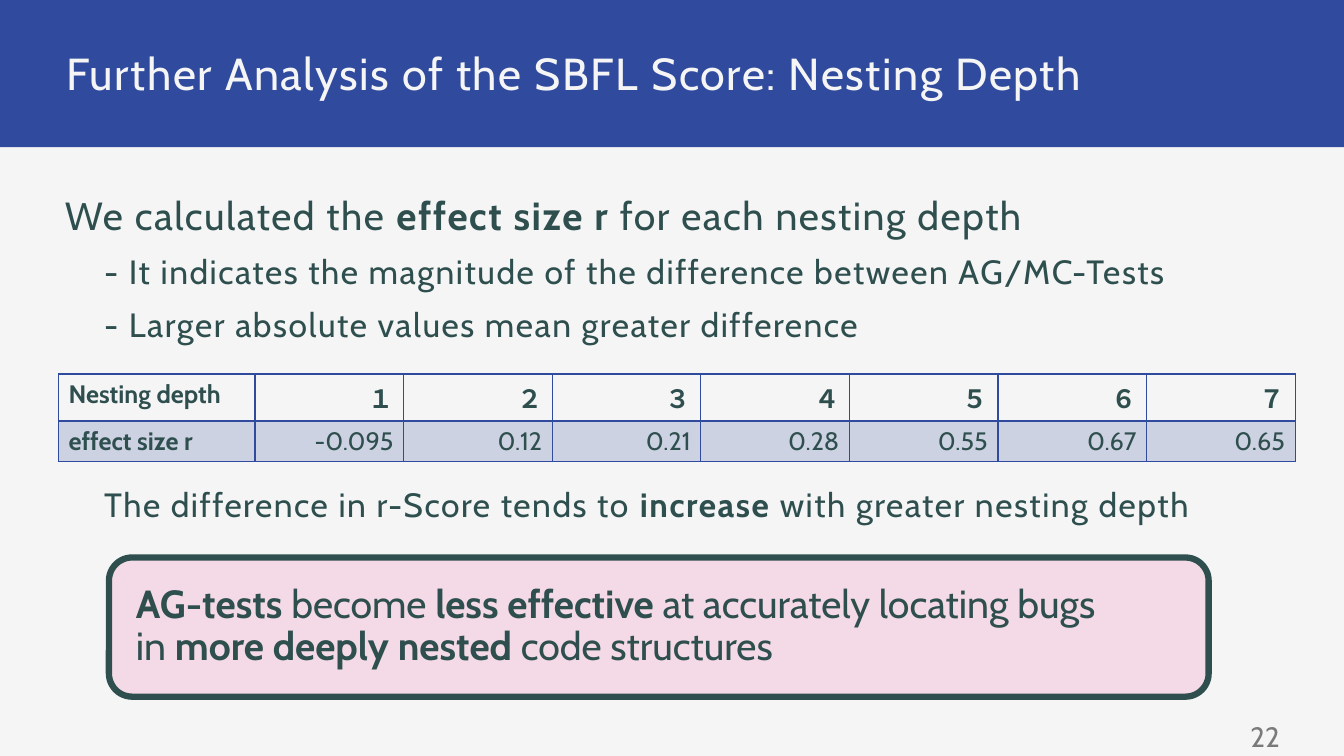
"""Builds the slide on effect size by nesting depth."""
from dataclasses import dataclass
from typing import Any

from lxml import etree
from pptx import Presentation, util as u
from pptx.dml.color import RGBColor
from pptx.enum import shapes, text
from pptx.oxml import ns


@dataclass(frozen=True)
class Theme:
    font: str = "Cabin"
    back: str = "F5F5F5"
    blue: str = "304A9E"
    ink: str = "2F4F4F"
    pink: str = "F4DAE6"
    gray: str = "7A7A7A"
    title: int = 32
    lead: int = 28
    item: int = 24
    page: int = 20
    cell: int = 18
    track: int = 110


@dataclass(frozen=True)
class Box:
    left: float
    top: float
    width: float
    height: float

    def pts(self) -> list[u.Length]:
        return [u.Pt(n) for n in (self.left, self.top, self.width, self.height)]


@dataclass(frozen=True)
class Line:
    words: str
    size: int
    level: int = 0
    before: float = 0


LOOK = Theme()
WIDE, HIGH = 960, 540
BAND = Box(-2, -1.5, 964, 106.6)
HEAD = Box(41.8, 31, 877, 42.5)
BODY = Box(41.8, 136, 877, 373)
PAGE = Box(702.7, 511.9, 216, 28)
GRID = Box(41.8, 267.1, 883.4, 62.5)
NOTE = Box(77.8, 398.2, 785.5, 99.4)
FIRST = 140.4
ROWS = (33.5, 29)
INDENT = 28

LINES = (
    Line("We calculated the *effect size r* for each nesting depth", LOOK.lead, 0, 14),
    Line("- It indicates the magnitude of the difference between AG/MC-Tests", LOOK.item, 1, 12),
    Line("- Larger absolute values mean greater difference", LOOK.item, 1, 12),
    Line("The difference in r-Score tends to* increase *with greater nesting depth",
         LOOK.item, 1, 102),
)
DATA = (
    ("Nesting depth", *"１２３４５６７"),
    ("effect size r", "-0.095", "0.12", "0.21", "0.28", "0.55", "0.67", "0.65"),
)


def tint(tone: str) -> RGBColor:
    """Turn a hex string into a colour."""
    return RGBColor.from_string(tone)


def style(run: Any, size: int, tone: str = LOOK.ink, bold: bool = False, track: int = 0) -> None:
    """Format one run."""
    font = run.font
    font.name, font.size, font.bold = LOOK.font, u.Pt(size), bold
    font.color.rgb = tint(tone)
    if track:
        run._r.get_or_add_rPr().set("spc", str(track))


def write(para: Any, words: str, size: int, track: int = 0) -> None:
    """Write words, bold between stars, with line breaks kept."""
    for turn, part in enumerate(words.split("*")):
        for row, piece in enumerate(part.split("\n")):
            if row:
                para.add_line_break()
            if piece:
                run = para.add_run()
                run.text = piece
                style(run, size, bold=turn % 2 == 1, track=track)


def frame(shape: Any, pad: float, anchor: Any = text.MSO_ANCHOR.TOP) -> Any:
    """Set wrapping, insets and anchor, and return the text frame."""
    area = shape.text_frame
    area.word_wrap = True
    area.auto_size = text.MSO_AUTO_SIZE.NONE
    area.vertical_anchor = anchor
    area.margin_left = area.margin_right = area.margin_top = area.margin_bottom = u.Pt(pad)
    return area


def place(shape: Any, box: Box) -> None:
    """Move a placeholder to its box."""
    shape.left, shape.top, shape.width, shape.height = box.pts()


def panel(slide: Any, kind: Any, box: Box, fill: str, edge: str = "") -> Any:
    """Add a filled shape with an optional outline."""
    shape = slide.shapes.add_shape(kind, *box.pts())
    shape.shadow.inherit = False
    shape.fill.solid()
    shape.fill.fore_color.rgb = tint(fill)
    if edge:
        shape.line.color.rgb = tint(edge)
        shape.line.width = u.Pt(4.5)
    else:
        shape.line.fill.background()
    return shape


def rule(cell: Any, sides: dict[str, float]) -> None:
    """Draw the borders of a cell, widths in points."""
    props = cell._tc.get_or_add_tcPr()
    for spot, (side, width) in enumerate(sides.items()):
        line = etree.Element(ns.qn(f"a:ln{side}"), w=str(u.Pt(width)))
        fill = etree.SubElement(line, ns.qn("a:solidFill"))
        etree.SubElement(fill, ns.qn("a:srgbClr"), val=LOOK.blue)
        props.insert(spot, line)


def grid(slide: Any) -> None:
    """Add the table of effect sizes."""
    count = len(DATA[0])
    table = slide.shapes.add_table(len(DATA), count, *GRID.pts()).table
    rest = (GRID.width - FIRST) / (count - 1)
    for spot, col in enumerate(table.columns):
        col.width = u.Pt(rest if spot else FIRST)
    for row, (high, words) in enumerate(zip(ROWS, DATA)):
        table.rows[row].height = u.Pt(high)
        for col, word in enumerate(words):
            cell = table.cell(row, col)
            cell.text_frame.text = word
            para = cell.text_frame.paragraphs[0]
            para.alignment = text.PP_ALIGN.RIGHT if col else text.PP_ALIGN.LEFT
            style(para.runs[0], LOOK.cell, bold=row == 0 or col == 0)
            if row:
                cell.fill.solid()
                cell.fill.fore_color.rgb = tint(LOOK.blue)
                tone = cell._tc.tcPr.find(".//" + ns.qn("a:srgbClr"))
                etree.SubElement(tone, ns.qn("a:alpha"), val="20000")
            else:
                cell.fill.background()
            rule(cell, {"L": 1, "R": 1, "T": 1 + row, "B": 2 - row})


def main() -> None:
    """Build and save the slide."""
    deck = Presentation()
    deck.slide_width, deck.slide_height = u.Pt(WIDE), u.Pt(HIGH)
    slide = deck.slides.add_slide(deck.slide_layouts[1])
    slide.background.fill.solid()
    slide.background.fill.fore_color.rgb = tint(LOOK.back)

    band = panel(slide, shapes.MSO_SHAPE.RECTANGLE, BAND, LOOK.blue)
    slide.shapes._spTree.insert(2, band._element)

    title, body = slide.placeholders
    place(title, HEAD)
    area = frame(title, 5.8)
    area.text = "Further Analysis of the SBFL Score: Nesting Depth"
    para = area.paragraphs[0]
    para.alignment, para.line_spacing = text.PP_ALIGN.JUSTIFY, 0.9
    style(para.runs[0], LOOK.title, LOOK.back, track=LOOK.track)

    place(body, BODY)
    area = frame(body, 4.5)
    for spot, line in enumerate(LINES):
        para = area.add_paragraph() if spot else area.paragraphs[0]
        para.level, para.line_spacing = line.level, 0.9
        para.space_before = u.Pt(line.before)
        props = para._p.get_or_add_pPr()
        props.set("marL", str(u.Pt(INDENT * line.level)))
        props.set("indent", "0")
        etree.SubElement(props, ns.qn("a:buNone"))
        write(para, line.words, line.size, LOOK.track)

    page = slide.shapes.add_textbox(*PAGE.pts())
    area = frame(page, 4.5, text.MSO_ANCHOR.MIDDLE)
    area.text = "22"
    area.paragraphs[0].alignment = text.PP_ALIGN.RIGHT
    style(area.paragraphs[0].runs[0], LOOK.page, LOOK.gray)

    grid(slide)

    note = panel(slide, shapes.MSO_SHAPE.ROUNDED_RECTANGLE, NOTE, LOOK.pink, LOOK.ink)
    para = frame(note, 14.4, text.MSO_ANCHOR.MIDDLE).paragraphs[0]
    para.alignment, para.line_spacing = text.PP_ALIGN.LEFT, 0.9
    write(para, "*AG-tests* become *less effective *at accurately locating bugs \n"
                "in *more deeply nested* code structures", LOOK.lead)

    deck.save("out.pptx")


if __name__ == "__main__":
    main()
